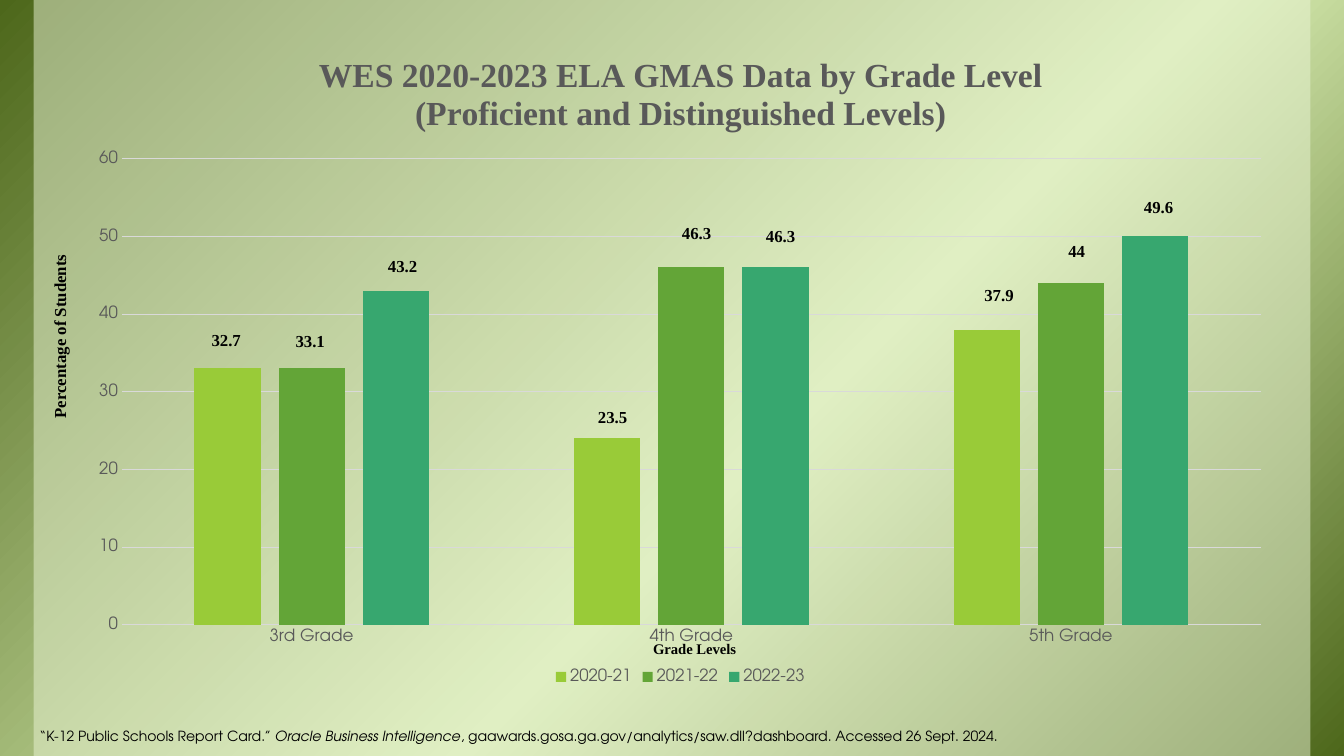
"""Build a slide with a clustered column chart of ELA results by grade level."""
import lxml.etree
import pptx
import pptx.chart.data
import pptx.dml.color
import pptx.enum.chart
import pptx.enum.shapes
import pptx.enum.text
import pptx.oxml
import pptx.oxml.ns
import pptx.util

THEME = {
    "serif": "Times New Roman", "sans": "TeX Gyre Adventor",
    "black": "000000", "grey": "595959", "grid": "D9D9D9", "panel": "EBF5D7",
    "gradient": [(0, "4D671B"), (58, "D6EAAF"), (100, "4D671B")],
    "series": ["99CB38", "63A537", "37A76F"],
    "title": 24, "label": 12, "axis_title": 10.5, "citation": 10,
}
COLUMNS, ROWS = 160, 90
GRADES = ["3rd Grade", "4th Grade", "5th Grade"]
RESULTS = {
    "2020-21": [(32.7, 24, 38.85), (23.5, 70, 48), (37.9, 116, 33.5)],
    "2021-22": [(33.1, 34, 39), (46.3, 80, 26.05), (44, 126, 28.2)],
    "2022-23": [(43.2, 45, 30), (46.3, 90, 26.5), (49.6, 135, 22.95)],
}

presentation = pptx.Presentation()
presentation.slide_width = pptx.util.Inches(13.33)
presentation.slide_height = pptx.util.Inches(7.5)
slide = presentation.slides.add_slide(presentation.slide_layouts[6])


def place(left, top, width, height):
    """Turn grid columns and rows into slide lengths."""
    column = presentation.slide_width / COLUMNS
    row = presentation.slide_height / ROWS
    return [round(length) for length in (left * column, top * row, width * column, height * row)]


def write(paragraph, text, font="serif", size="label", colour="black", bold=True, italic=False):
    """Add a formatted run to a paragraph."""
    run = paragraph.add_run()
    run.text = text
    run.font.name = THEME[font]
    run.font.size = pptx.util.Pt(THEME[size])
    run.font.color.rgb = pptx.dml.color.RGBColor.from_string(THEME[colour])
    run.font.bold, run.font.italic = bold, italic


backdrop, panel = [
    slide.shapes.add_shape(pptx.enum.shapes.MSO_SHAPE.RECTANGLE, *place(*cells))
    for cells in [(0, 0, COLUMNS, ROWS), (4, 0, 152, ROWS)]
]
for shape in (backdrop, panel):
    shape.shadow.inherit = False
    shape.line.fill.background()

backdrop.fill.gradient()
backdrop.fill.gradient_angle = 315
stop_list = backdrop.fill._fill._gradFill.find(pptx.oxml.ns.qn("a:gsLst"))
for stop in list(stop_list):
    stop_list.remove(stop)
for position, colour in THEME["gradient"]:
    stop = lxml.etree.SubElement(stop_list, pptx.oxml.ns.qn("a:gs"), pos=str(position * 1000))
    lxml.etree.SubElement(stop, pptx.oxml.ns.qn("a:srgbClr"), val=colour)

panel.fill.solid()
panel.fill.fore_color.rgb = pptx.dml.color.RGBColor.from_string(THEME["panel"])
panel_colour = panel.fill._xPr.find(".//" + pptx.oxml.ns.qn("a:srgbClr"))
lxml.etree.SubElement(panel_colour, pptx.oxml.ns.qn("a:alpha"), val="50000")

chart_data = pptx.chart.data.CategoryChartData()
chart_data.categories = GRADES
for year, results in RESULTS.items():
    chart_data.add_series(year, [round(value) for value, left, top in results])
chart = slide.shapes.add_chart(
    pptx.enum.chart.XL_CHART_TYPE.COLUMN_CLUSTERED, *place(9, 4, 144, 78), chart_data
).chart
chart.font.name = THEME["sans"]
chart.font.size = pptx.util.Pt(THEME["label"])
chart.font.color.rgb = pptx.dml.color.RGBColor.from_string(THEME["grey"])

chart.has_title = True
title_frame = chart.chart_title.text_frame
write(title_frame.paragraphs[0], "WES 2020-2023 ELA GMAS Data by Grade Level", size="title", colour="grey")
write(title_frame.add_paragraph(), "(Proficient and Distinguished Levels)", size="title", colour="grey")

chart.has_legend = True
chart.legend.position = pptx.enum.chart.XL_LEGEND_POSITION.BOTTOM
chart.legend.include_in_layout = False

plot = chart.plots[0]
plot.gap_width, plot.overlap, plot.vary_by_categories = 219, -27, False
for series, colour in zip(plot.series, THEME["series"]):
    series.format.fill.solid()
    series.format.fill.fore_color.rgb = pptx.dml.color.RGBColor.from_string(colour)

value_axis, category_axis = chart.value_axis, chart.category_axis
value_axis.minimum_scale, value_axis.maximum_scale, value_axis.major_unit = 0, 60, 10
for axis in (value_axis, category_axis):
    axis.major_tick_mark = pptx.enum.chart.XL_TICK_MARK.NONE
value_axis.format.line.fill.background()
for line in (value_axis.major_gridlines.format.line, category_axis.format.line):
    line.color.rgb = pptx.dml.color.RGBColor.from_string(THEME["grid"])
    line.width = pptx.util.Pt(0.75)

title_layout = {"xMode": "edge", "yMode": "edge", "x": 28.6 / 144, "y": 2.2 / 78}
plot_layout = {"layoutTarget": "inner", "xMode": "edge", "yMode": "edge",
               "x": 5.5 / 144, "y": 14.9 / 78, "w": 135.6 / 144, "h": 55.5 / 78}
chart_element = chart._chartSpace.chart
for parent, settings in [(chart_element.find(pptx.oxml.ns.qn("c:title")), title_layout),
                         (chart_element.plotArea, plot_layout)]:
    layout = parent.find(pptx.oxml.ns.qn("c:layout"))
    if layout is None:
        layout = pptx.oxml.parse_xml("<c:layout %s/>" % pptx.oxml.ns.nsdecls("c"))
        parent.insert(1 if settings is title_layout else 0, layout)
    for child in list(layout):
        layout.remove(child)
    manual = lxml.etree.SubElement(layout, pptx.oxml.ns.qn("c:manualLayout"))
    for name, value in settings.items():
        lxml.etree.SubElement(manual, pptx.oxml.ns.qn("c:" + name), val=str(value))

captions = [
    ((left, top, 7, 3.5), [(f"{value:g}", {})], {})
    for results in RESULTS.values() for value, left, top in results
]
citation_format = {"font": "sans", "size": "citation", "bold": False}
captions += [
    ((-8.5, 33.55, 31.4, 3.5), [("Percentage of Students", {})], {"rotation": 270}),
    ((67, 75.7, 31.4, 3.4), [("Grade Levels", {"size": "axis_title"})], {"centred": True}),
    ((3.5, 86, 153, 3.2), [
        ("“K-12 Public Schools Report Card.” ", citation_format),
        ("Oracle Business Intelligence", {**citation_format, "italic": True}),
        (", gaawards.gosa.ga.gov/analytics/saw.dll?dashboard. Accessed 26 Sept. 2024.", citation_format),
    ], {"spacing": 1.0}),
]
for cells, runs, options in captions:
    shape = slide.shapes.add_textbox(*place(*cells))
    shape.rotation = options.get("rotation", 0)
    shape.text_frame.word_wrap = True
    shape.text_frame.auto_size = pptx.enum.text.MSO_AUTO_SIZE.SHAPE_TO_FIT_TEXT
    paragraph = shape.text_frame.paragraphs[0]
    paragraph.line_spacing = options.get("spacing", 0.95)
    if options.get("centred"):
        paragraph.alignment = pptx.enum.text.PP_ALIGN.CENTER
    for text, text_format in runs:
        write(paragraph, text, **text_format)

presentation.save("out.pptx")
